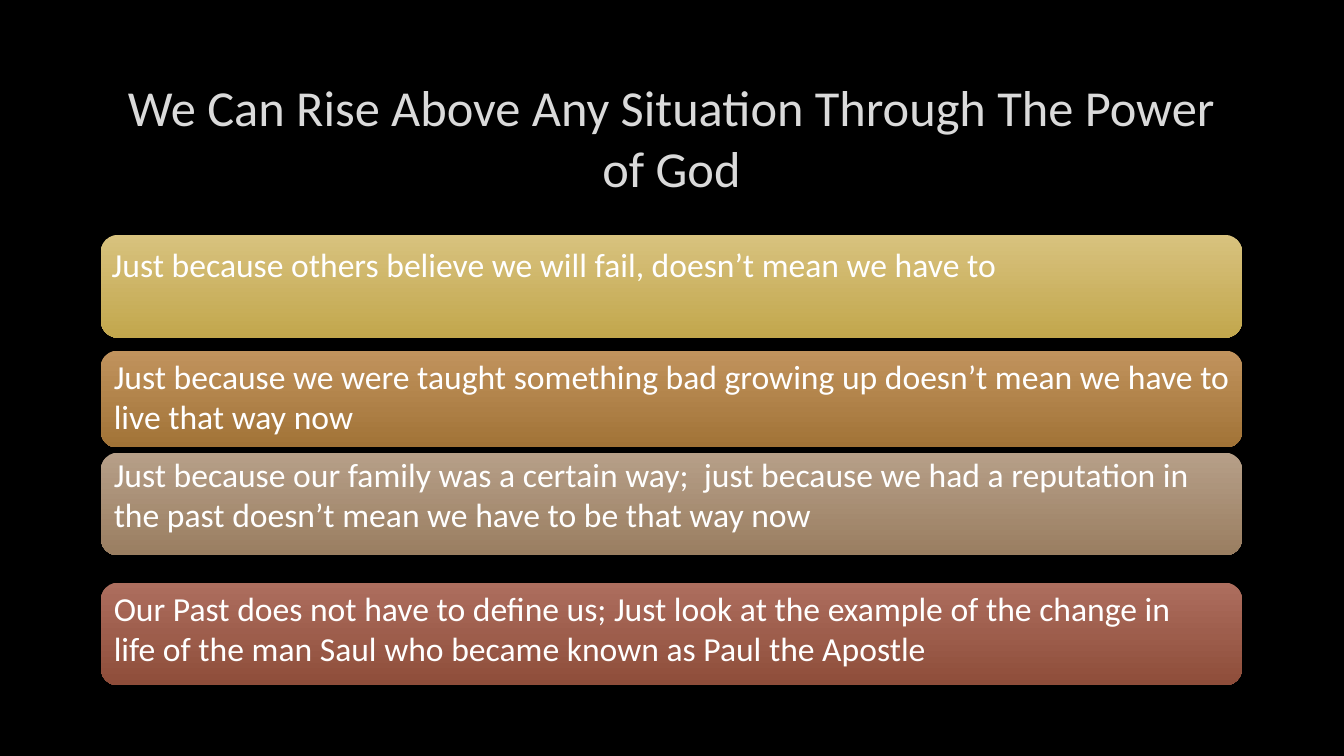
from pptx import Presentation
from pptx.dml.color import RGBColor
from pptx.enum.shapes import MSO_SHAPE
from pptx.enum.text import MSO_ANCHOR, MSO_AUTO_SIZE, PP_ALIGN
from pptx.util import Inches, Pt

TITLE = "We Can Rise Above Any Situation Through The Power of God"
BAR_LEFT = 1
BAR_WIDTH = 11.32
BARS = [
    {"top": 2.33, "height": 1.02, "colors": ("D8C27E", "C2A74D"),
     "text_box": (1.01, 2.37, 11.32, 0.5),
     "text": "Just because others believe we will fail, doesn’t mean we have to"},
    {"top": 3.48, "height": 0.96, "colors": ("C1935D", "A17337"),
     "text_box": (1.03, 3.48, 11.32, 0.91),
     "text": "Just because we were taught something bad growing up doesn’t mean we have to live that way now"},
    {"top": 4.49, "height": 1.02, "colors": ("B69F88", "9A7E61"),
     "text_box": (1.03, 4.45, 11.31, 0.91),
     "text": "Just because our family was a certain way;  just because we had a reputation in the past doesn’t mean we have to be that way now"},
    {"top": 5.78, "height": 1.02, "colors": ("AD6E5E", "8E4D3A"),
     "text_box": (1.03, 5.78, 11.12, 0.91),
     "text": "Our Past does not have to define us; Just look at the example of the change in life of the man Saul who became known as Paul the Apostle"},
]


def color(value):
    return RGBColor.from_string(value)


def write_text(shape, text, size=24, font_color="FFFFFF", align=PP_ALIGN.LEFT,
               anchor=MSO_ANCHOR.TOP, auto_size=MSO_AUTO_SIZE.SHAPE_TO_FIT_TEXT):
    frame = shape.text_frame
    frame.word_wrap = True
    frame.auto_size = auto_size
    frame.vertical_anchor = anchor
    paragraph = frame.paragraphs[0]
    paragraph.alignment = align
    run = paragraph.add_run()
    run.text = text
    run.font.name = "Calibri"
    run.font.size = Pt(size)
    run.font.color.rgb = color(font_color)


def add_bar(slide, top, height, colors):
    shape = slide.shapes.add_shape(
        MSO_SHAPE.ROUNDED_RECTANGLE,
        Inches(BAR_LEFT), Inches(top), Inches(BAR_WIDTH), Inches(height))
    shape.shadow.inherit = False
    shape.line.fill.background()
    shape.fill.gradient()
    shape.fill.gradient_angle = 270
    for stop, position, value in zip(shape.fill.gradient_stops, (0, 1), colors):
        stop.position = position
        stop.color.rgb = color(value)


def main():
    presentation = Presentation()
    presentation.slide_width = Inches(13.33)
    presentation.slide_height = Inches(7.5)
    slide = presentation.slides.add_slide(presentation.slide_layouts[5])
    slide.background.fill.solid()
    slide.background.fill.fore_color.rgb = color("000000")

    title = slide.shapes.title
    title.left, title.top = Inches(BAR_LEFT), Inches(0.67)
    title.width, title.height = Inches(BAR_WIDTH), Inches(1.38)
    write_text(title, TITLE, size=36, font_color="DADADA", align=PP_ALIGN.CENTER,
               anchor=MSO_ANCHOR.MIDDLE, auto_size=MSO_AUTO_SIZE.NONE)

    for bar in BARS:
        add_bar(slide, bar["top"], bar["height"], bar["colors"])
    for bar in BARS:
        text_box = slide.shapes.add_textbox(*map(Inches, bar["text_box"]))
        write_text(text_box, bar["text"])

    presentation.save("out.pptx")


if __name__ == "__main__":
    main()
